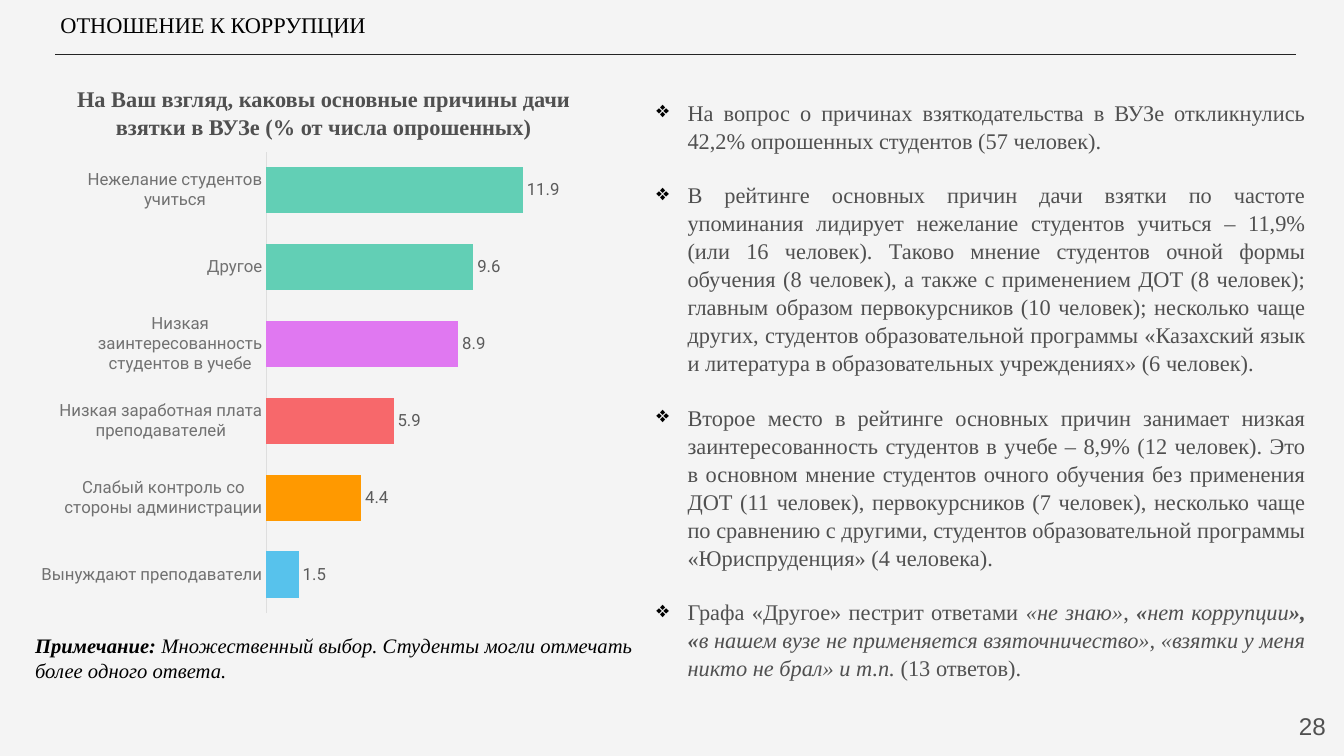
import pptx
import pptx.chart.data
import pptx.dml.color
import pptx.enum.chart
import pptx.enum.shapes
import pptx.enum.text
import pptx.util
from lxml import etree
from pptx.oxml.ns import qn
from pptx.util import Inches

SERIF = "Times New Roman"
GREY = "505050"
PLAIN, BOLD, ITALIC, BOLD_ITALIC = (False, False), (True, False), (False, True), (True, True)
ALIGN = pptx.enum.text.PP_ALIGN

REASONS = [
    ("Вынуждают преподаватели", 1.5, "57C2EC"),
    ("Слабый контроль со стороны администрации", 4.4, "FF9900"),
    ("Низкая заработная плата преподавателей", 5.9, "F7686B"),
    ("Низкая заинтересованность студентов в учебе", 8.9, "E078F1"),
    ("Другое", 9.6, "62CFB5"),
    ("Нежелание студентов учиться", 11.9, "62CFB5"),
]

FINDINGS = [
    [("На вопрос о причинах взяткодательства в ВУЗе откликнулись 42,2% опрошенных "
      "студентов (57 человек).", PLAIN)],
    [("В рейтинге основных причин дачи взятки по частоте упоминания лидирует нежелание "
      "студентов учиться – 11,9% (или 16 человек). Таково мнение студентов очной формы "
      "обучения (8 человек), а также с применением ДОТ (8 человек); главным образом "
      "первокурсников (10 человек); несколько чаще других, студентов образовательной "
      "программы «Казахский язык и литература в образовательных учреждениях» "
      "(6 человек).", PLAIN)],
    [("Второе место в рейтинге основных причин занимает низкая заинтересованность "
      "студентов в учебе – 8,9% (12 человек). Это в основном мнение студентов очного "
      "обучения без применения ДОТ (11 человек), первокурсников (7 человек), несколько "
      "чаще по сравнению с другими, студентов образовательной программы "
      "«Юриспруденция» (4 человека).", PLAIN)],
    [("Графа «Другое» пестрит ответами ", PLAIN), ("«не знаю»", ITALIC), (", ", PLAIN),
     ("«", BOLD_ITALIC), ("нет коррупции", ITALIC), ("», «", BOLD_ITALIC),
     ("в нашем вузе не применяется взяточничество», «взятки у меня никто не брал» "
      "и т.п.", ITALIC), (" (13 ответов).", PLAIN)],
]


def rgb(code):
    """Turn a hex string into a colour."""
    return pptx.dml.color.RGBColor.from_string(code)


def style_font(font, size, color, name):
    """Set the size, colour and typeface of a font."""
    font.size = pptx.util.Pt(size)
    font.color.rgb = rgb(color)
    font.name = name


def add_bullet(para):
    """Give a paragraph a hanging black diamond bullet."""
    props = para._p.get_or_add_pPr()
    props.set("marL", str(Inches(0.31)))
    props.set("indent", str(-Inches(0.31)))
    color = etree.SubElement(props, qn("a:buClr"))
    etree.SubElement(color, qn("a:srgbClr"), val="000000")
    etree.SubElement(props, qn("a:buChar"), char="❖")


def fill_box(box, paragraphs, size, color, name=SERIF, align=ALIGN.LEFT,
             inset=(0.1, 0.05), spacing=None, bullets=False):
    """Write paragraphs of (text, style) runs into a text shape."""
    frame = box.text_frame
    frame.word_wrap = True
    frame.auto_size = pptx.enum.text.MSO_AUTO_SIZE.NONE
    frame.vertical_anchor = pptx.enum.text.MSO_ANCHOR.TOP
    frame.margin_left = frame.margin_right = Inches(inset[0])
    frame.margin_top = frame.margin_bottom = Inches(inset[1])
    for index, runs in enumerate(paragraphs):
        para = frame.add_paragraph() if index else frame.paragraphs[0]
        para.alignment = align
        para.line_spacing = spacing
        para.space_before = pptx.util.Pt(19.2 if index else 0)
        if bullets:
            add_bullet(para)
        for text, (bold, italic) in runs:
            span = para.add_run()
            span.text = text
            style_font(span.font, size, color, name)
            span.font.bold, span.font.italic = bold, italic


def add_text(page, place, paragraphs, size, color, **options):
    """Add a text box at the given place."""
    box = page.shapes.add_textbox(*map(Inches, place))
    fill_box(box, paragraphs, size, color, **options)


def add_title(page, text):
    """Place and format the title placeholder."""
    title = page.shapes.title
    title.left, title.top, title.width, title.height = map(Inches, (0.5, 0.06, 12.33, 0.37))
    fill_box(title, [[(text, PLAIN)]], 16, "000000")


def add_rule(page):
    """Draw the thin line under the title."""
    rule = page.shapes.add_connector(
        pptx.enum.shapes.MSO_CONNECTOR.STRAIGHT,
        Inches(0.55), Inches(0.54), Inches(12.85), Inches(0.54))
    rule.line.color.rgb = rgb("242424")
    rule.line.width = pptx.util.Pt(0.75)
    etree.SubElement(rule._element.spPr, qn("a:effectLst"))


def set_plot_area(chart, x, y, w, h):
    """Fix the inner plot area as fractions of the chart."""
    area = chart._chartSpace.chart.plotArea
    for old in area.findall(qn("c:layout")):
        area.remove(old)
    layout = etree.Element(qn("c:layout"))
    area.insert(0, layout)
    manual = etree.SubElement(layout, qn("c:manualLayout"))
    settings = [("layoutTarget", "inner"), ("xMode", "edge"), ("yMode", "edge"),
                ("x", x), ("y", y), ("w", w), ("h", h)]
    for tag, value in settings:
        etree.SubElement(manual, qn("c:" + tag), val=str(value))


def add_reasons_chart(page):
    """Add the bar chart of reasons."""
    data = pptx.chart.data.CategoryChartData(number_format="0.0")
    data.categories = [name for name, value, color in REASONS]
    data.add_series("Series 1", [value for name, value, color in REASONS])
    chart = page.shapes.add_chart(
        pptx.enum.chart.XL_CHART_TYPE.BAR_CLUSTERED,
        Inches(0.41), Inches(1.5), Inches(5.8), Inches(4.63), data).chart
    style_font(chart.font, 10, "242424", "Arial")
    chart.has_legend = chart.has_title = False
    set_plot_area(chart, 0.385, 0, 0.516, 0.99)

    axis = chart.category_axis
    axis.major_tick_mark = pptx.enum.chart.XL_TICK_MARK.NONE
    axis.format.line.color.rgb = rgb("DEDEDE")
    axis.format.line.width = pptx.util.Pt(0.75)
    style_font(axis.tick_labels.font, 12, "717171", "Roboto")
    values = chart.value_axis
    values.visible = values.has_major_gridlines = False
    values.minimum_scale, values.maximum_scale = 0, 14

    plot = chart.plots[0]
    plot.gap_width = 66
    plot.vary_by_categories = False
    series = plot.series[0]
    for index, (name, value, color) in enumerate(REASONS):
        fill = series.points[index].format.fill
        fill.solid()
        fill.fore_color.rgb = rgb(color)
    labels = series.data_labels
    labels.show_value = True
    labels.position = pptx.enum.chart.XL_LABEL_POSITION.OUTSIDE_END
    style_font(labels.font, 12, "5B5B5B", "Roboto")


def main():
    """Build the slide and save the deck."""
    deck = pptx.Presentation()
    deck.slide_width, deck.slide_height = Inches(13.33), Inches(7.5)
    page = deck.slides.add_slide(deck.slide_layouts[5])
    page.background.fill.solid()
    page.background.fill.fore_color.rgb = rgb("F4F4F4")
    wide = (0.13, 0.13)
    add_rule(page)
    add_title(page, "ОТНОШЕНИЕ К КОРРУПЦИИ")
    add_text(page, (12.48, 6.93, 0.8, 0.57), [[("28", PLAIN)]], 17.3, GREY,
             name="Arial", align=ALIGN.RIGHT, inset=wide)
    add_text(page, (6.38, 0.84, 6.7, 6.47), FINDINGS, 16, GREY,
             align=ALIGN.JUSTIFY, inset=wide, spacing=1.04, bullets=True)
    add_text(page, (0.41, 0.7, 5.6, 0.81),
             [[("На Ваш взгляд, каковы основные причины дачи взятки в ВУЗе "
                "(% от числа опрошенных)", BOLD)]],
             16, GREY, align=ALIGN.CENTER, inset=wide, spacing=1.04)
    add_reasons_chart(page)
    add_text(page, (0.25, 6.23, 6.14, 0.59),
             [[("Примечание: ", BOLD_ITALIC),
               ("Множественный выбор. Студенты могли отмечать более одного ответа.", ITALIC)]],
             14.7, "000000")
    deck.save("out.pptx")


if __name__ == "__main__":
    main()
